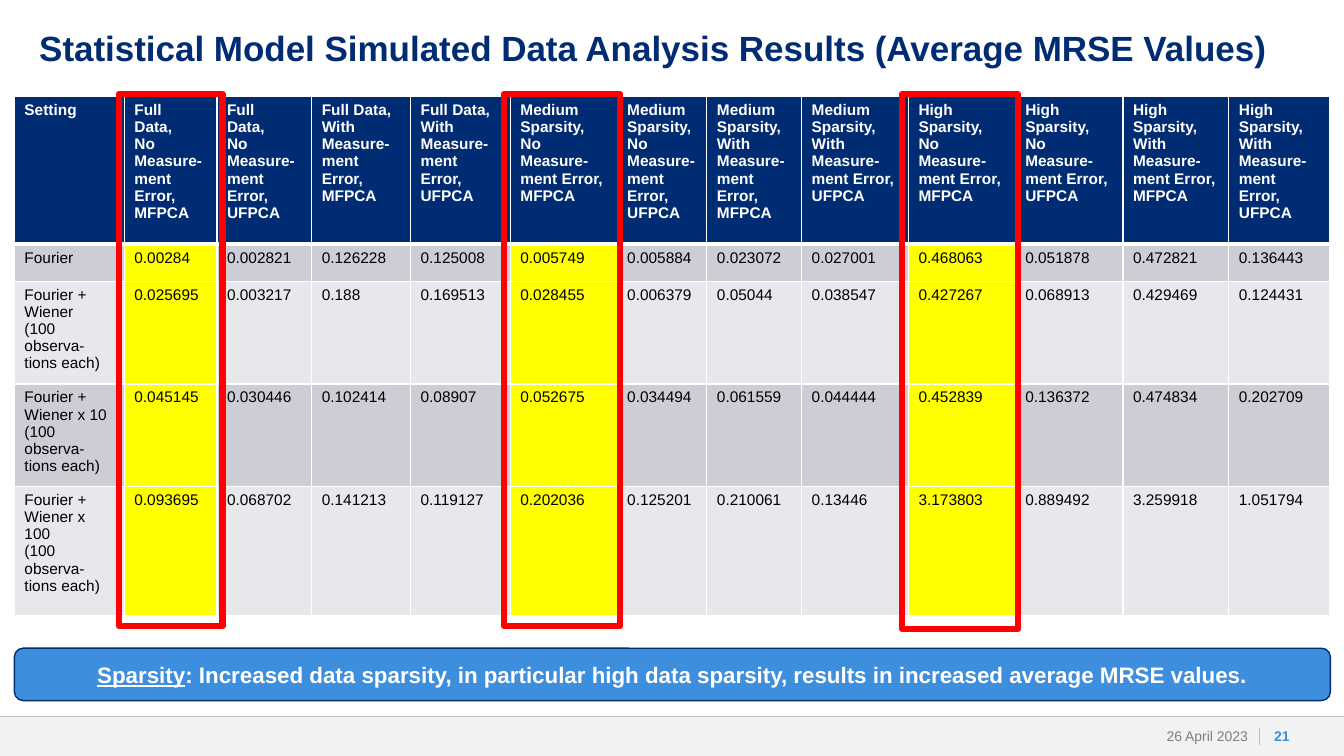
from pptx import Presentation
from pptx.dml.color import RGBColor
from pptx.enum.shapes import MSO_CONNECTOR, MSO_SHAPE
from pptx.enum.text import MSO_ANCHOR, PP_ALIGN
from pptx.oxml import parse_xml
from pptx.oxml.ns import nsdecls
from pptx.util import Pt

# Content
TITLE = "Statistical Model Simulated Data Analysis Results (Average MRSE Values)"
CONDITIONS = [
    ("Full\nData,", "No"), ("Full Data,", "With"),
    ("Medium Sparsity,", "No"), ("Medium Sparsity,", "With"),
    ("High Sparsity,", "No"), ("High Sparsity,", "With"),
]
METHODS = ["MFPCA", "UFPCA"]
OBSERVATIONS = "\n(100 observa-tions each)"
RESULTS = [
    ("Fourier",
     "0.00284 0.002821 0.126228 0.125008 0.005749 0.005884 "
     "0.023072 0.027001 0.468063 0.051878 0.472821 0.136443"),
    ("Fourier + Wiener" + OBSERVATIONS,
     "0.025695 0.003217 0.188 0.169513 0.028455 0.006379 "
     "0.05044 0.038547 0.427267 0.068913 0.429469 0.124431"),
    ("Fourier + Wiener x 10" + OBSERVATIONS,
     "0.045145 0.030446 0.102414 0.08907 0.052675 0.034494 "
     "0.061559 0.044444 0.452839 0.136372 0.474834 0.202709"),
    ("Fourier + Wiener x 100" + OBSERVATIONS,
     "0.093695 0.068702 0.141213 0.119127 0.202036 0.125201 "
     "0.210061 0.13446 3.173803 0.889492 3.259918 1.051794"),
]
TAKEAWAY = [
    ("Sparsity", True),
    (": Increased data sparsity, in particular high data sparsity, "
     "results in increased average MRSE values.", False),
]
DATE, NUMBER = "26 April 2023", "21"

# Layout in points, and colours
WIDTH, HEIGHT = 960, 540
FOOTER_TOP, FOOTER_HEIGHT = 512, 28
TABLE_LEFT, TABLE_TOP, TABLE_WIDTH = 10.3, 69, 940
COLUMNS = [78.5, 66.2, 67.7, 70.6, 71.3, 76.3, 64.1, 67.7, 76.3, 76.3, 77, 75.6, 72]
ROWS = [105.5, 26.5, 68.5, 68.5, 92]
HIGHLIGHTED = (1, 5, 9)
FRAMES = [(85, 74, 380), (360, 83, 380), (644.4, 83, 382)]
NAVY, BLUE, WHITE, BLACK = "002C73", "3E8EDE", "FFFFFF", "000000"
YELLOW, RED, BANDS = "FFFF00", "FF0000", ("CCCDD5", "E7E8EB")
RULE, PALE, GREY = "BFBFBF", "F2F2F2", "808080"


def colour(value):
    return RGBColor.from_string(value)


def style(target, shade, **values):
    target.font.color.rgb = colour(shade)
    for name, value in {"name": "Arial", **values}.items():
        setattr(target.font, name, value)


def setup(frame, inset=None, **values):
    if inset is not None:
        left, top, right, bottom = inset
        values.update(margin_left=Pt(left), margin_top=Pt(top),
                      margin_right=Pt(right), margin_bottom=Pt(bottom))
    for name, value in {"word_wrap": True, **values}.items():
        setattr(frame, name, value)


def add_box(kind, place, fill=None, line=None, weight=1):
    box = page.shapes.add_shape(kind, *map(Pt, place))
    box.shadow.inherit = False
    for part, shade in ((box.fill, fill), (box.line.fill, line)):
        if shade:
            part.solid()
            part.fore_color.rgb = colour(shade)
        else:
            part.background()
    if line:
        box.line.width = Pt(weight)
    return box


def add_rule(*ends):
    rule = page.shapes.add_connector(MSO_CONNECTOR.STRAIGHT, *map(Pt, ends))
    rule.line.color.rgb = colour(RULE)
    rule.line.width = Pt(0.5)
    rule._element.spPr.append(parse_xml(f"<a:effectLst {nsdecls('a')}/>"))


def add_footer_text(text, left, width, side, align, shade, bold):
    box = page.shapes.add_textbox(Pt(left), Pt(FOOTER_TOP), Pt(width), Pt(FOOTER_HEIGHT))
    setup(box.text_frame, (side, 0, side, 0), vertical_anchor=MSO_ANCHOR.MIDDLE)
    para = box.text_frame.paragraphs[0]
    para.alignment = align
    span = para.add_run()
    span.text = text
    style(span, shade, size=Pt(10), bold=bold)


def fill_cell(cell, text, fill, header):
    properties = cell._tc.get_or_add_tcPr()
    for side in "LRTB":
        weight = Pt(3 if header and side == "B" else 1)
        properties.append(parse_xml(
            f'<a:ln{side} {nsdecls("a")} w="{weight}"><a:solidFill>'
            f'<a:srgbClr val="{WHITE}"/></a:solidFill></a:ln{side}>'))
    cell.fill.solid()
    cell.fill.fore_color.rgb = colour(fill)
    cell.text_frame.text = text
    for para in cell.text_frame.paragraphs:
        for span in para.runs:
            style(span, WHITE if header else BLACK, size=Pt(11), bold=header)


deck = Presentation()
deck.slide_width, deck.slide_height = Pt(WIDTH), Pt(HEIGHT)
page = deck.slides.add_slide(deck.slide_layouts[5])

# Footer
add_box(MSO_SHAPE.RECTANGLE, (0, FOOTER_TOP, WIDTH, FOOTER_HEIGHT), PALE)
add_rule(0, FOOTER_TOP, WIDTH, FOOTER_TOP)
add_rule(899.5, 520, 899.5, 532)
add_footer_text(DATE, 790.5, 108, 7.2, PP_ALIGN.RIGHT, GREY, False)
add_footer_text(NUMBER, 900.7, 30, 0, PP_ALIGN.CENTER, BLUE, True)

# Title
title = page.shapes.title
title.left, title.top, title.width, title.height = map(Pt, (28, 22.3, 888, 60))
setup(title.text_frame, (0, 0, 0, 0), vertical_anchor=MSO_ANCHOR.TOP)
title.text_frame.text = TITLE
heading = title.text_frame.paragraphs[0]
heading.alignment = PP_ALIGN.LEFT
heading.line_spacing = 0.9
style(heading.runs[0], NAVY, size=Pt(25), bold=True)

# Results table
headers = ["Setting"] + [f"{level}\n{error} Measure-ment Error,\n{method}"
                         for level, error in CONDITIONS for method in METHODS]
lines = [headers] + [[setting, *values.split()] for setting, values in RESULTS]
table = page.shapes.add_table(len(ROWS), len(COLUMNS), Pt(TABLE_LEFT), Pt(TABLE_TOP),
                              Pt(TABLE_WIDTH), Pt(sum(ROWS))).table
for column, width in zip(table.columns, COLUMNS):
    column.width = Pt(width)
for row, height in zip(table.rows, ROWS):
    row.height = Pt(height)
for i, line in enumerate(lines):
    for j, text in enumerate(line):
        if i == 0:
            fill = NAVY
        else:
            fill = YELLOW if j in HIGHLIGHTED else BANDS[(i - 1) % 2]
        fill_cell(table.cell(i, j), text, fill, i == 0)

# Red frames around the highlighted columns
for left, width, height in FRAMES:
    add_box(MSO_SHAPE.RECTANGLE, (left, 67.2, width, height), line=RED, weight=4.5)

# Takeaway banner
banner = add_box(MSO_SHAPE.ROUNDED_RECTANGLE, (TABLE_LEFT, 463, TABLE_WIDTH, 37.4), BLUE, NAVY)
setup(banner.text_frame, vertical_anchor=MSO_ANCHOR.MIDDLE)
para = banner.text_frame.paragraphs[0]
para.alignment = PP_ALIGN.CENTER
for text, underline in TAKEAWAY:
    span = para.add_run()
    span.text = text
    style(span, WHITE, size=Pt(16), bold=True, underline=underline)

deck.save("out.pptx")
